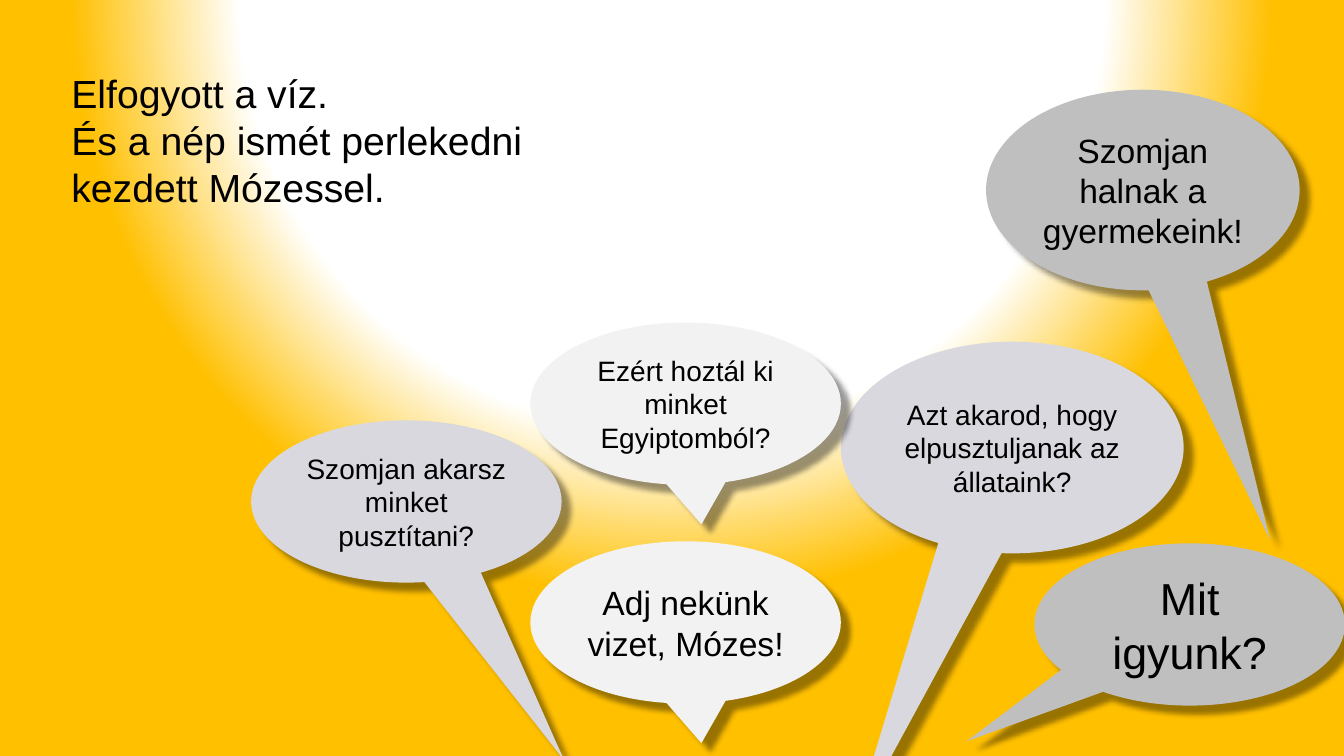
from lxml import etree
from pptx import Presentation
from pptx.dml.color import RGBColor
from pptx.enum.shapes import MSO_SHAPE
from pptx.enum.text import MSO_ANCHOR, MSO_AUTO_SIZE, PP_ALIGN
from pptx.oxml import parse_xml
from pptx.oxml.ns import nsdecls, qn
from pptx.util import Inches, Pt

CALLOUT = MSO_SHAPE.OVAL_CALLOUT
CENTER, LEFT = PP_ALIGN.CENTER, PP_ALIGN.LEFT
MIDDLE = MSO_ANCHOR.MIDDLE
GROW = MSO_AUTO_SIZE.SHAPE_TO_FIT_TEXT

COLORS = {
    "white": "FFFFFF",
    "gold": "FFC000",
    "text": "000000",
    "shadow": "000000",
    "light": "F2F2F2",
    "lilac": "D8D8DE",
    "gray": "BFBFBF",
}
COLUMNS, ROWS = 1333, 750  # grid cells of 0.01 inch
BUBBLE = (308, 161)

# words, text size, fill, (column, row), (columns, rows), tail tip, mirrored
BUBBLES = [
    ("Szomjan akarsz minket pusztítani?", 20, "lilac", (249, 417), BUBBLE, (0.508, 1.594), False),
    ("Szomjan halnak a gyermekeink!", 24, "gray", (978, 89), (311, 199), (0.406, 1.745), False),
    ("Mit igyunk?", 32, "gray", (1026, 539), BUBBLE, (0.718, 0.72), True),
    ("Azt akarod, hogy elpusztuljanak az állataink?", 20, "lilac",
     (834, 339), (340, 210), (-0.467, 1.799), False),
    ("Adj nekünk vizet, Mózes!", 24, "light", (526, 537), BUBBLE, (0.051, 0.744), False),
    ("Ezért hoztál ki minket Egyiptomból?", 20, "light", (526, 320), BUBBLE, (0.051, 0.744), False),
]
STORY = ["Elfogyott a víz.", "És a nép ismét perlekedni", "kezdett Mózessel."]


class Slide:
    font = "Arial"

    def __init__(self, deck):
        self.page = deck.slides.add_slide(deck.slide_layouts[6])
        self.cell_width = deck.slide_width / COLUMNS
        self.cell_height = deck.slide_height / ROWS

    def place(self, start, span):
        """Turn grid cells into left, top, width and height."""
        sizes = (self.cell_width, self.cell_height) * 2
        return [round(cells * size) for cells, size in zip(start + span, sizes)]

    def glow(self, stops):
        """Fill the background with circles centred above the slide."""
        self.page.background.fill.gradient()
        gradient = self.page.element.find(".//" + qn("a:gradFill"))
        for child in list(gradient):
            gradient.remove(child)
        stop_list = etree.SubElement(gradient, qn("a:gsLst"))
        for percent, color in stops:
            stop = etree.SubElement(stop_list, qn("a:gs"), pos=str(percent * 1000))
            etree.SubElement(stop, qn("a:srgbClr"), val=COLORS[color])
        circle = etree.SubElement(gradient, qn("a:path"))
        circle.set("path", "circle")
        etree.SubElement(circle, qn("a:fillToRect"), l="50000", t="-80000", r="50000", b="180000")

    def set_lines(self, box, lines, size, align):
        frame = box.text_frame
        frame.word_wrap = True
        for index, line in enumerate(lines):
            para = frame.add_paragraph() if index else frame.paragraphs[0]
            para.text = line
            para.alignment = align
            para.font.name = self.font
            para.font.size = Pt(size)
            para.font.color.rgb = RGBColor.from_string(COLORS["text"])
        return frame

    def text(self, lines, size, start, span):
        box = self.page.shapes.add_textbox(*self.place(start, span))
        self.set_lines(box, lines, size, LEFT).auto_size = GROW

    def bubble(self, words, size, color, start, span, tip, mirrored):
        box = self.page.shapes.add_shape(CALLOUT, *self.place(start, span))
        box.adjustments[0], box.adjustments[1] = tip
        box.fill.solid()
        box.fill.fore_color.rgb = RGBColor.from_string(COLORS[color])
        box.line.fill.background()
        if mirrored:
            box.element.spPr.find(qn("a:xfrm")).set("flipH", "1")
        self.cast_shadow(box)
        self.set_lines(box, [words], size, CENTER).vertical_anchor = MIDDLE

    def cast_shadow(self, box):
        box.shadow.inherit = False
        effects = box.element.spPr.find(qn("a:effectLst"))
        effects.append(parse_xml(
            f'<a:outerShdw {nsdecls("a")} blurRad="{Pt(4)}" dist="{Pt(9)}" dir="2700000" '
            f'algn="tl" rotWithShape="0"><a:srgbClr val="{COLORS["shadow"]}">'
            '<a:alpha val="40000"/></a:srgbClr></a:outerShdw>'))


def main():
    deck = Presentation()
    deck.slide_width, deck.slide_height = Inches(13.33), Inches(7.5)
    slide = Slide(deck)
    slide.glow([(0, "white"), (56, "white"), (78, "gold"), (100, "gold")])
    for bubble in BUBBLES:
        slide.bubble(*bubble)
    slide.text(STORY, 28, (61, 64), (619, 151))
    deck.save("out.pptx")


if __name__ == "__main__":
    main()
